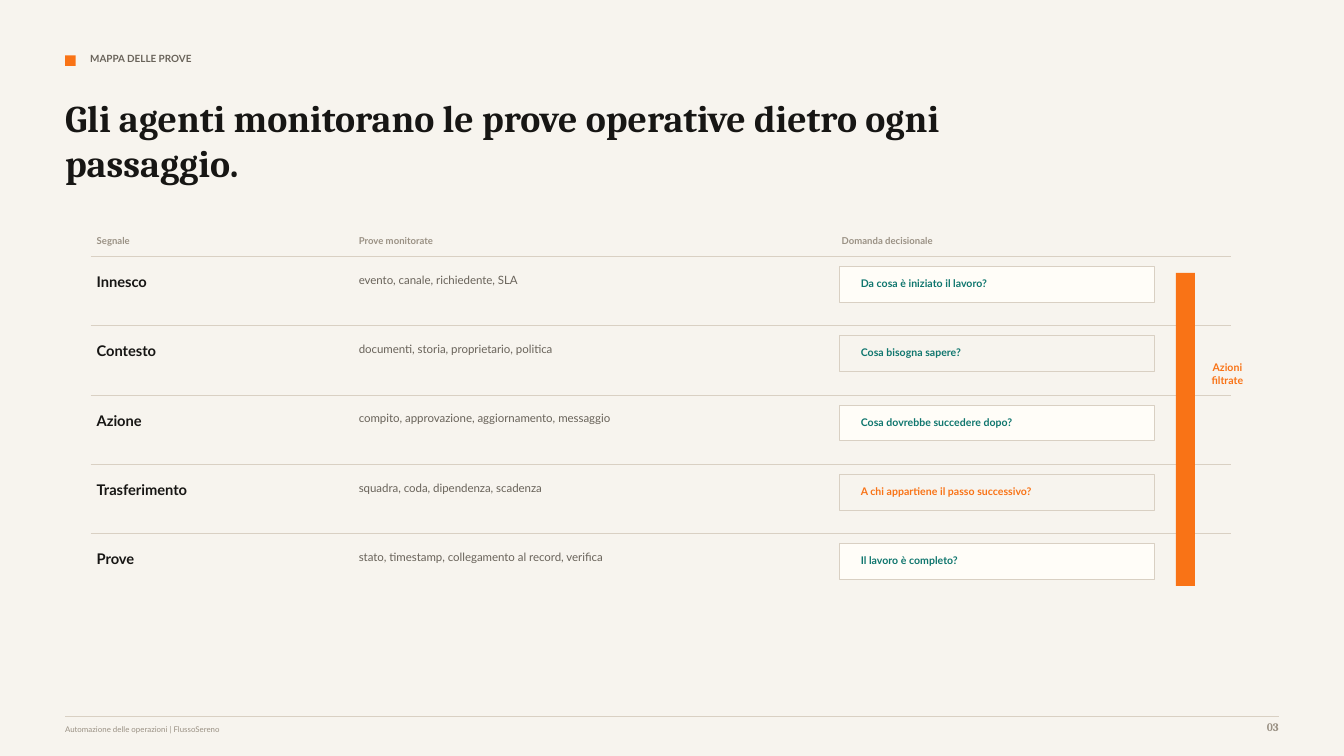
from lxml import etree
from pptx import Presentation
from pptx.dml.color import RGBColor
from pptx.enum.shapes import MSO_CONNECTOR, MSO_SHAPE
from pptx.enum.text import MSO_ANCHOR, MSO_AUTO_SIZE, PP_ALIGN
from pptx.oxml.ns import qn
from pptx.util import Pt

RECTANGLE = MSO_SHAPE.RECTANGLE
STRAIGHT = MSO_CONNECTOR.STRAIGHT
TOP = MSO_ANCHOR.TOP
NO_AUTOFIT = MSO_AUTO_SIZE.NONE
LEFT, CENTER, RIGHT = PP_ALIGN.LEFT, PP_ALIGN.CENTER, PP_ALIGN.RIGHT

PAPER, WHITE, INK = "F7F4EE", "FFFDF8", "171614"
GREY, MUTED, RULE = "69635A", "9A9184", "D9D0C3"
ORANGE, TEAL = "F97316", "0F766E"

# Text formats
EYEBROW = {"name": "Lato", "size": 7.1, "bold": True, "color": GREY}
TITLE = {"name": "Cambria", "size": 27, "bold": True, "color": INK}
HEADER = {"name": "Lato", "size": 6.8, "bold": True, "color": MUTED}
SIGNAL = {"name": "Lato", "size": 10.5, "bold": True, "color": INK}
EVIDENCE = {"name": "Lato", "size": 8.2, "bold": False, "color": GREY}
QUESTION = {"name": "Lato", "size": 7.5, "bold": True, "color": TEAL}
ACCENT = {**QUESTION, "color": ORANGE}
FOOTER = {"name": "Lato", "size": 5.6, "bold": False, "color": MUTED}
PAGE_NUMBER = {"name": "Cambria", "size": 8.2, "bold": True, "color": MUTED}

# Evidence map
HEADERS = ["Segnale", "Prove monitorate", "Domanda decisionale"]
ROWS = [
    ("Innesco", "evento, canale, richiedente, SLA",
     "Da cosa è iniziato il lavoro?"),
    ("Contesto", "documenti, storia, proprietario, politica",
     "Cosa bisogna sapere?"),
    ("Azione", "compito, approvazione, aggiornamento, messaggio",
     "Cosa dovrebbe succedere dopo?"),
    ("Trasferimento", "squadra, coda, dipendenza, scadenza",
     "A chi appartiene il passo successivo?"),
    ("Prove", "stato, timestamp, collegamento al record, verifica",
     "Il lavoro è completo?"),
]
ACCENT_ROW = 3
TABLE_LEFT, TABLE_TOP = 64.8, 167.8
COLUMN_WIDTHS = [187.2, 344.9, 282.2]
HEADER_HEIGHT, ROW_HEIGHT = 15.5, 49.5
FIRST_ROW_TOP = TABLE_TOP + HEADER_HEIGHT


def rgb(color):
    return RGBColor.from_string(color)


def write(frame, text, style, align=LEFT):
    para = frame.paragraphs[0]
    para.alignment = align
    span = para.add_run()
    span.text = text
    for key, value in style.items():
        if key == "color":
            span.font.color.rgb = rgb(value)
        else:
            setattr(span.font, key, Pt(value) if key == "size" else value)


def set_frame(frame):
    values = {"margin_left": 0, "margin_top": 0, "margin_right": 0,
              "margin_bottom": 0, "word_wrap": True,
              "auto_size": NO_AUTOFIT, "vertical_anchor": TOP}
    for key, value in values.items():
        setattr(frame, key, value)


def add_text(page, place, text, style, align=LEFT):
    box = page.shapes.add_textbox(*map(Pt, place))
    set_frame(box.text_frame)
    write(box.text_frame, text, style, align)


def add_title(page, place, text):
    title = page.shapes.title
    title.left, title.top, title.width, title.height = map(Pt, place)
    set_frame(title.text_frame)
    write(title.text_frame, text, TITLE)


def add_rectangle(page, place, fill=None, line=None):
    shape = page.shapes.add_shape(RECTANGLE, *map(Pt, place))
    shape.shadow.inherit = False
    if fill:
        shape.fill.solid()
        shape.fill.fore_color.rgb = rgb(fill)
    else:
        shape.fill.background()
    if line:
        shape.line.color.rgb = rgb(line)
        shape.line.width = Pt(0.75)
    else:
        shape.line.fill.background()


def add_rule(page, left, right, y):
    rule = page.shapes.add_connector(STRAIGHT, Pt(left), Pt(y), Pt(right), Pt(y))
    rule.line.color.rgb = rgb(RULE)
    rule.line.width = Pt(0.75)
    etree.SubElement(rule._element.spPr, qn("a:effectLst"))


def set_borders(cell, ruled_sides):
    properties = cell._tc.get_or_add_tcPr()
    for side in ("lnL", "lnR", "lnT", "lnB"):
        border = etree.SubElement(properties, qn(f"a:{side}"), w=str(Pt(0.75)))
        if side in ruled_sides:
            fill = etree.SubElement(border, qn("a:solidFill"))
            etree.SubElement(fill, qn("a:srgbClr"), val=RULE)
        else:
            etree.SubElement(border, qn("a:noFill"))


def fill_cell(cell, text, style, left, top, ruled_sides):
    margins = {"margin_left": left, "margin_top": top,
               "margin_right": 0, "margin_bottom": 0}
    for key, value in margins.items():
        setattr(cell, key, Pt(value))
    cell.vertical_anchor = TOP
    set_borders(cell, ruled_sides)
    cell.fill.background()
    write(cell.text_frame, text, style)


def add_evidence_table(page):
    # Question boxes lie behind the table, every second one filled
    for index in range(len(ROWS)):
        top = FIRST_ROW_TOP + index * ROW_HEIGHT + 7.2
        add_rectangle(page, (599.8, top, 224.8, 25.5),
                      None if index % 2 else WHITE, RULE)

    height = HEADER_HEIGHT + len(ROWS) * ROW_HEIGHT
    place = (TABLE_LEFT, TABLE_TOP, sum(COLUMN_WIDTHS), height)
    table = page.shapes.add_table(
        len(ROWS) + 1, len(HEADERS), *map(Pt, place)).table
    table.first_row = table.horz_banding = False
    for column, width in zip(table.columns, COLUMN_WIDTHS):
        column.width = Pt(width)
    for index, row in enumerate(table.rows):
        row.height = Pt(ROW_HEIGHT if index else HEADER_HEIGHT)

    for column, text in enumerate(HEADERS):
        fill_cell(table.cell(0, column), text, HEADER, 4.3, 0, ("lnB",))
    for index, texts in enumerate(ROWS):
        question = ACCENT if index == ACCENT_ROW else QUESTION
        formats = [(SIGNAL, 4.3, 11.8), (EVIDENCE, 4.3, 11.8),
                   (question, 18, 14.7)]
        last = index == len(ROWS) - 1
        sides = ("lnT",) if last else ("lnT", "lnB")
        for column, (text, layout) in enumerate(zip(texts, formats)):
            fill_cell(table.cell(index + 1, column), text, *layout, sides)


def main():
    deck = Presentation()
    deck.slide_width, deck.slide_height = Pt(960), Pt(540)
    page = deck.slides.add_slide(deck.slide_layouts[5])
    page.background.fill.solid()
    page.background.fill.fore_color.rgb = rgb(PAPER)

    # Heading
    add_rectangle(page, (46.5, 39.6, 7.5, 7.5), ORANGE)
    add_text(page, (64.5, 37.4, 465, 13.5), "MAPPA DELLE PROVE", EYEBROW)
    add_title(page, (46.5, 67.5, 637.5, 75),
              "Gli agenti monitorano le prove operative dietro ogni passaggio.")

    # Evidence map with the filter bar
    add_evidence_table(page)
    add_rectangle(page, (840, 195, 13.5, 223.5), ORANGE)
    add_text(page, (864, 258, 25.5, 88.5), "Azioni filtrate", ACCENT, CENTER)

    # Footer
    add_rule(page, 46.5, 913.5, 511.6)
    add_text(page, (46.5, 517.5, 570, 10.5),
             "Automazione delle operazioni | FlussoSereno", FOOTER)
    add_text(page, (877.5, 514.5, 36, 13.5), "03", PAGE_NUMBER, RIGHT)

    deck.save("out.pptx")


if __name__ == "__main__":
    main()
